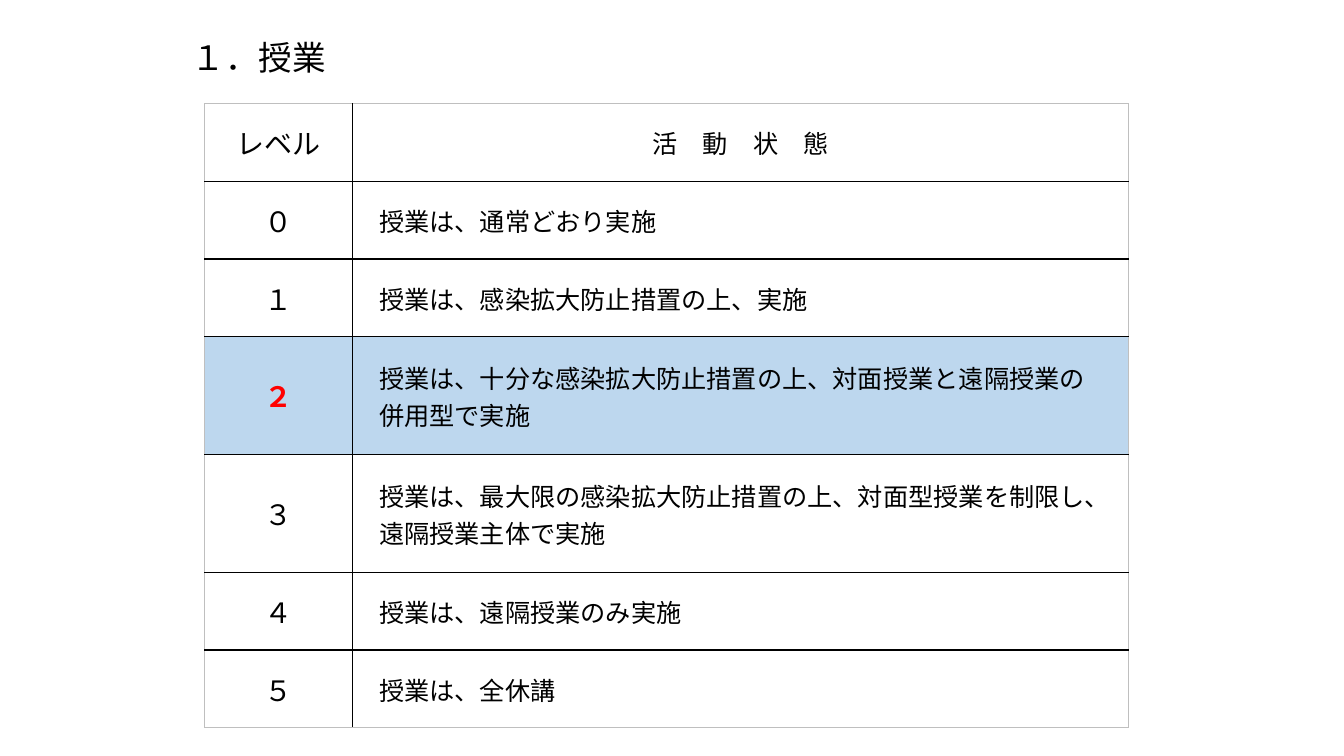
from dataclasses import dataclass

from lxml.etree import SubElement
from pptx import Presentation
from pptx.dml.color import RGBColor
from pptx.enum.text import MSO_ANCHOR, PP_ALIGN
from pptx.oxml.ns import qn
from pptx.util import Inches, Pt

# Content
TITLE = "１．授業"
HEADER = ("レベル", "活　動　状　態")
LEVELS = [
    ("０", "授業は、通常どおり実施"),
    ("１", "授業は、感染拡大防止措置の上、実施"),
    ("２", "授業は、十分な感染拡大防止措置の上、対面授業と遠隔授業の\n併用型で実施"),
    ("３", "授業は、最大限の感染拡大防止措置の上、対面型授業を制限し、\n遠隔授業主体で実施"),
    ("４", "授業は、遠隔授業のみ実施"),
    ("５", "授業は、全休講"),
]
CURRENT_LEVEL = "２"


@dataclass(frozen=True)
class Theme:
    font: str = "Noto Sans CJK JP"
    ink: str = "000000"
    alert: str = "FF0000"
    highlight: str = "BDD7EE"
    frame: str = "BFBFBF"
    title_size: int = 24
    level_size: int = 20
    state_size: int = 18


THEME = Theme()
COL_WIDTHS = (1.47, 7.69)
ROW_HEIGHT, EXTRA_LINE = 0.77, 0.4


def style_text(tf, size, color=THEME.ink, bold=False, align=PP_ALIGN.LEFT):
    for p in tf.paragraphs:
        p.alignment = align
        for r in p.runs:
            r.font.size = Pt(size)
            r.font.bold = bold
            r.font.name = THEME.font
            r.font.color.rgb = RGBColor.from_string(color)
            SubElement(r.font._element, qn("a:ea"), typeface=THEME.font)


def add_borders(cell, outer_sides):
    tc_pr = cell._tc.get_or_add_tcPr()
    for side in "LRTB":
        outer = side in outer_sides
        ln = SubElement(tc_pr, qn(f"a:ln{side}"), w=str(Pt(0.75 if outer else 1)))
        fill = SubElement(ln, qn("a:solidFill"))
        SubElement(fill, qn("a:srgbClr"), val=THEME.frame if outer else THEME.ink)


prs = Presentation()
prs.slide_width, prs.slide_height = Inches(13.33), Inches(7.5)
s = prs.slides.add_slide(prs.slide_layouts[5])

# Title
title = s.shapes.title
title.left, title.top = Inches(1.8), Inches(0.32)
title.width, title.height = Inches(1.55), Inches(0.5)
tf = title.text_frame
tf.text = TITLE
tf.word_wrap = False
tf.vertical_anchor = MSO_ANCHOR.MIDDLE
style_text(tf, THEME.title_size)

# Table grid: each extra text line makes its row taller
rows = [HEADER] + LEVELS
heights = [ROW_HEIGHT + EXTRA_LINE * state.count("\n") for _, state in rows]
table = s.shapes.add_table(
    len(rows), len(COL_WIDTHS), Inches(2.03), Inches(1.03),
    Inches(sum(COL_WIDTHS)), Inches(sum(heights))).table
table.first_row = table.horz_banding = False
for col, width in zip(table.columns, COL_WIDTHS):
    col.width = Inches(width)
for row, height in zip(table.rows, heights):
    row.height = Inches(height)

# Table cells
for i, row in enumerate(rows):
    current = row[0] == CURRENT_LEVEL
    for j, text in enumerate(row):
        cell = table.cell(i, j)
        cell.text_frame.text = text
        cell.vertical_anchor = MSO_ANCHOR.MIDDLE
        is_level, is_state = j == 0, i > 0 and j == 1
        if is_state:
            cell.margin_left = Inches(0.26)
            cell.margin_right = cell.margin_top = Inches(0.01)
            cell.margin_bottom = 0
        alert = current and is_level
        style_text(
            cell.text_frame,
            THEME.level_size if is_level else THEME.state_size,
            THEME.alert if alert else THEME.ink,
            alert,
            PP_ALIGN.LEFT if is_state else PP_ALIGN.CENTER)

        outer_sides = "L" if is_level else "R"
        outer_sides += "T" if i == 0 else "B" if i == len(rows) - 1 else ""
        add_borders(cell, outer_sides)
        if current:
            cell.fill.solid()
            cell.fill.fore_color.rgb = RGBColor.from_string(THEME.highlight)
        else:
            cell.fill.background()

prs.save("out.pptx")
